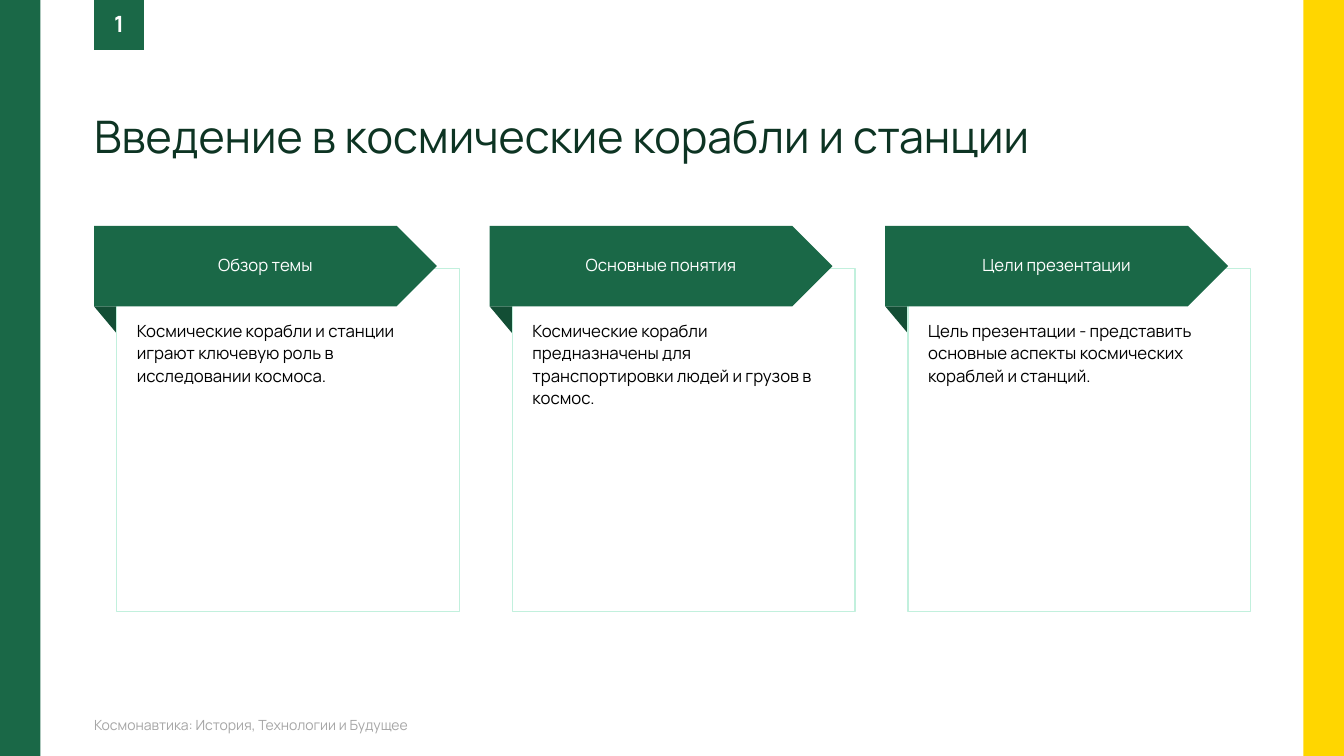
from dataclasses import dataclass

from pptx import Presentation
from pptx import util as u
from pptx.dml.color import RGBColor
from pptx.enum import shapes, text

TITLE = "Введение в космические корабли и станции"
FOOTER = "Космонавтика: История, Технологии и Будущее"
NUMBER = "1"
CARDS = [
    ("Обзор темы", "Космические корабли и станции играют ключевую роль в исследовании космоса."),
    ("Основные понятия", "Космические корабли предназначены для транспортировки людей и грузов в космос."),
    ("Цели презентации", "Цель презентации - представить основные аспекты космических кораблей и станций."),
]


@dataclass(frozen=True)
class Theme:
    font: str = "Manrope"
    green: str = "1A6847"
    fold: str = "134E35"
    yellow: str = "FFD600"
    border: str = "C2F0DD"
    white: str = "FFFFFF"
    black: str = "000000"
    heading: str = "0D3423"
    muted: str = "A6A6A6"
    title_size: int = 32
    number_size: int = 16
    card_size: int = 12
    footer_size: int = 10


THEME = Theme()
KIND = shapes.MSO_SHAPE
ANCHOR = text.MSO_ANCHOR
ALIGN = text.PP_ALIGN

WIDTH, HEIGHT = 33.87, 19.05
STRIPE = 1.02
LEFT, PITCH = 2.37, 9.97
CARD_SIDE, CARD_TOP = 8.64, 6.77
BANNER_TOP, BANNER_HEIGHT = 5.69, 2.03
FOLD_WIDTH, FOLD_HEIGHT = 0.57, 0.68
TAB_SIZE = 1.26


def add_block(page, kind, bounds, fill, line=None):
    shape = page.shapes.add_shape(kind, *map(u.Cm, bounds))
    shape.shadow.inherit = False
    shape.fill.solid()
    shape.fill.fore_color.rgb = RGBColor.from_string(fill)
    if line:
        shape.line.color.rgb = RGBColor.from_string(line)
        shape.line.width = u.Pt(1)
    else:
        shape.line.fill.background()
    return shape


def write(shape, words, size, color, anchor=ANCHOR.MIDDLE, align=ALIGN.LEFT,
          insets=(0, 0, 0, 0), spacing=0.9, before=0, bold=False):
    box = shape.text_frame
    box.text = words
    box.word_wrap = True
    box.auto_size = text.MSO_AUTO_SIZE.NONE
    box.vertical_anchor = anchor
    box.margin_left, box.margin_top, box.margin_right, box.margin_bottom = map(u.Cm, insets)
    para = box.paragraphs[0]
    para.alignment = align
    para.line_spacing = spacing
    para.space_before = u.Pt(before)
    para.font.name = THEME.font
    para.font.size = u.Pt(size)
    para.font.bold = bold
    para.font.color.rgb = RGBColor.from_string(color)


def add_card(page, left, heading, body):
    inner = left + FOLD_WIDTH
    fold = add_block(page, KIND.RIGHT_TRIANGLE,
                     (left, BANNER_TOP + BANNER_HEIGHT, FOLD_WIDTH, FOLD_HEIGHT), THEME.fold)
    fold.rotation = 180
    card = add_block(page, KIND.RECTANGLE, (inner, CARD_TOP, CARD_SIDE, CARD_SIDE),
                     THEME.white, THEME.border)
    write(card, body, THEME.card_size, THEME.black, anchor=ANCHOR.TOP,
          insets=(0.51, 1.27, 0.51, 0), spacing=1.1)
    banner = add_block(page, KIND.PENTAGON, (left, BANNER_TOP, CARD_SIDE, BANNER_HEIGHT), THEME.green)
    write(banner, heading, THEME.card_size, THEME.white, align=ALIGN.CENTER,
          insets=(BANNER_HEIGHT / 4, 0, 0, 0))


def main():
    """Build the introduction slide with three bannered cards."""
    deck = Presentation()
    deck.slide_width, deck.slide_height = u.Cm(WIDTH), u.Cm(HEIGHT)
    page = deck.slides.add_slide(deck.slide_layouts.get_by_name("Title Only"))

    for left, color in ((0, THEME.green), (WIDTH - STRIPE, THEME.yellow)):
        add_block(page, KIND.RECTANGLE, (left, 0, STRIPE, HEIGHT), color)

    title = page.shapes.title
    title.left, title.top, title.width, title.height = map(u.Cm, (LEFT, 0, 29.13, 4.11))
    write(title, TITLE, THEME.title_size, THEME.heading, anchor=ANCHOR.BOTTOM, before=10)

    footer = page.shapes.add_textbox(*map(u.Cm, (LEFT, 18.03, 16.71, 0.51)))
    write(footer, FOOTER, THEME.footer_size, THEME.muted, before=10)

    tab = add_block(page, KIND.RECTANGLE, (LEFT, 0, TAB_SIZE, TAB_SIZE), THEME.green)
    write(tab, NUMBER, THEME.number_size, THEME.white, align=ALIGN.CENTER,
          insets=(0.25, 0.13, 0.25, 0.13), before=10, bold=True)

    for index, (heading, body) in enumerate(CARDS):
        add_card(page, LEFT + index * PITCH, heading, body)

    deck.save("out.pptx")


if __name__ == "__main__":
    main()
